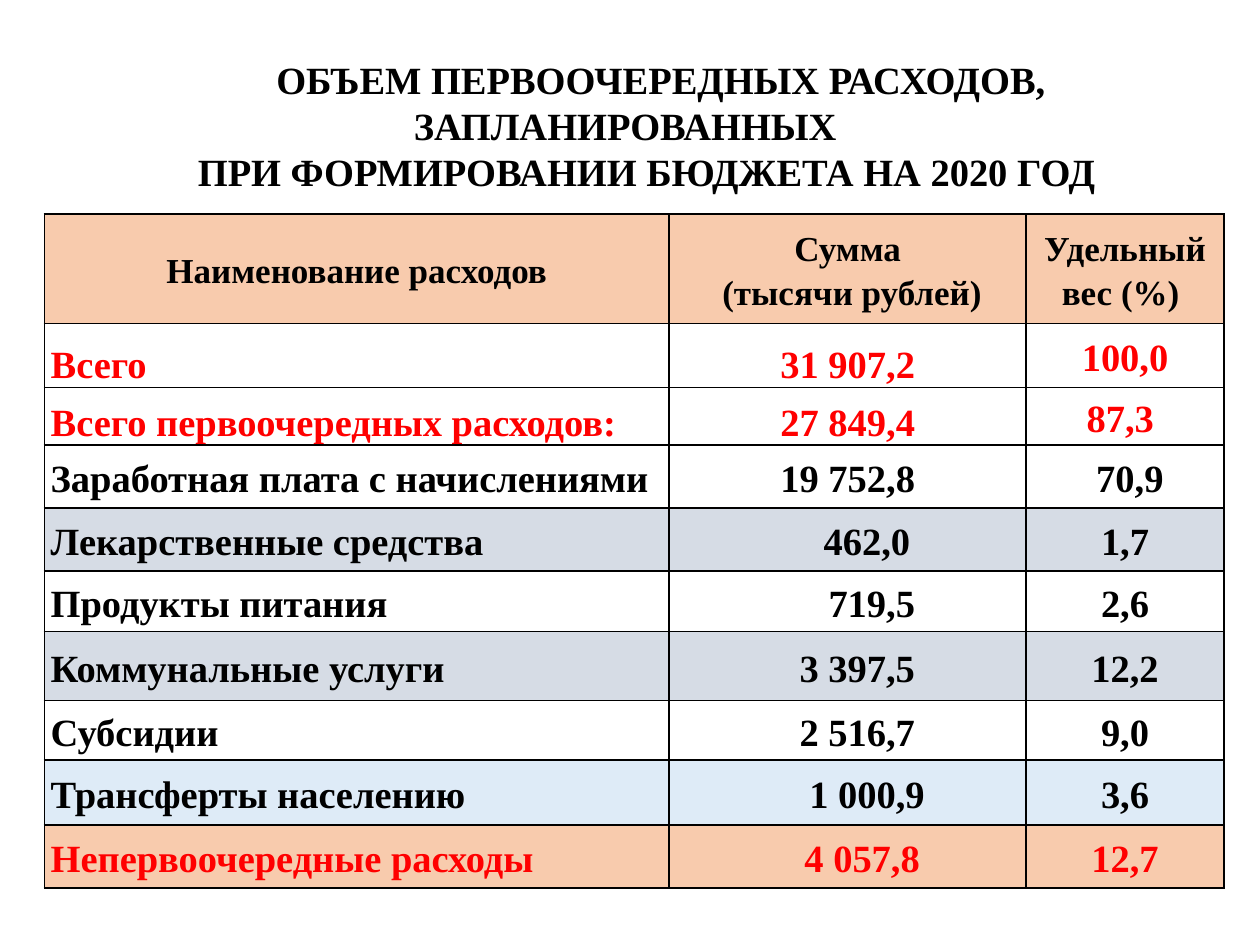
import pptx
import pptx.dml.color
import pptx.enum.text
import pptx.oxml
import pptx.oxml.ns
import pptx.util

Pt = pptx.util.Pt
RGBColor = pptx.dml.color.RGBColor
Align = pptx.enum.text.PP_ALIGN
Anchor = pptx.enum.text.MSO_ANCHOR

FONT = "Times New Roman"
BLACK = RGBColor(0x00, 0x00, 0x00)
RED = RGBColor(0xFF, 0x00, 0x00)
PEACH = RGBColor(0xF8, 0xCB, 0xAD)
GREY = RGBColor(0xD6, 0xDC, 0xE5)
PALE_BLUE = RGBColor(0xDE, 0xEB, 0xF7)

TITLE_LINES = [
    # text, first-line indent
    ("ОБЪЕМ ПЕРВООЧЕРЕДНЫХ РАСХОДОВ, ЗАПЛАНИРОВАННЫХ ", 35.3),
    ("ПРИ ФОРМИРОВАНИИ БЮДЖЕТА НА 2020 ГОД", 18.8),
]
HEADINGS = ["Наименование расходов", "Сумма\n (тысячи рублей)", "Удельный вес (%) "]
HEADING_HEIGHT = 62.5
COLUMN_WIDTHS = [357, 204, 113]
CELL_MARGIN = 3.6
EXPENSES = [
    # name, sum, share, text colour, fill, row height, extra left margin of the sum
    ("Всего", "31 907,2", "100,0", RED, None, 36.5, 0),
    ("Всего первоочередных расходов:", "27 849,4", "87,3 ", RED, None, 33, 0),
    ("Заработная плата с начислениями", "19 752,8", " 70,9", BLACK, None, 36, 0),
    ("Лекарственные средства", "462,0", "1,7", BLACK, GREY, 36, 22),
    ("Продукты питания", "719,5", "2,6", BLACK, None, 34.5, 27.5),
    ("Коммунальные услуги", "3 397,5", "12,2", BLACK, GREY, 39.5, 11),
    ("Субсидии", "2 516,7", "9,0", BLACK, None, 34, 11),
    ("Трансферты населению", "1 000,9", "3,6", BLACK, PALE_BLUE, 37, 22),
    ("Непервоочередные расходы", "4 057,8", "12,7", RED, PEACH, 36, 16.5),
]
TOTAL_ROWS = 2


def format_runs(paragraph, size, color):
    for run in paragraph.runs:
        run.font.name = FONT
        run.font.size = Pt(size)
        run.font.bold = True
        run.font.color.rgb = color


def add_title(slide):
    title = slide.shapes.title
    title.left, title.top, title.width, title.height = Pt(0), Pt(27.5), Pt(720), Pt(88)
    frame = title.text_frame
    frame.auto_size = pptx.enum.text.MSO_AUTO_SIZE.NONE
    frame.word_wrap = True
    frame.vertical_anchor = Anchor.MIDDLE
    frame.text = "\n".join(text for text, _ in TITLE_LINES)
    for paragraph, (_, indent) in zip(frame.paragraphs, TITLE_LINES):
        paragraph.alignment = Align.CENTER
        paragraph._p.get_or_add_pPr().set("indent", str(Pt(indent)))
        format_runs(paragraph, 22, BLACK)


def add_borders(cell):
    properties = cell._tc.get_or_add_tcPr()
    for position, side in enumerate(("lnL", "lnR", "lnT", "lnB")):
        border = pptx.oxml.parse_xml(
            f'<a:{side} {pptx.oxml.ns.nsdecls("a")} w="{Pt(1)}">'
            f'<a:solidFill><a:srgbClr val="{BLACK}"/></a:solidFill></a:{side}>'
        )
        properties.insert(position, border)


def fill_cell(cell, text, size, color, fill, alignment, anchor=Anchor.MIDDLE, shift=0):
    """Write and format one cell; shift widens the left margin to move centred text."""
    cell.margin_left = Pt(CELL_MARGIN + shift)
    cell.margin_right = Pt(CELL_MARGIN)
    cell.margin_top = cell.margin_bottom = 0
    cell.vertical_anchor = anchor
    cell.text_frame.text = text
    for paragraph in cell.text_frame.paragraphs:
        paragraph.alignment = alignment
        paragraph.line_spacing = 1.15
        format_runs(paragraph, size, color)
    if fill is None:
        cell.fill.background()
    else:
        cell.fill.solid()
        cell.fill.fore_color.rgb = fill
    add_borders(cell)


def add_expense_table(slide):
    heights = [HEADING_HEIGHT] + [expense[5] for expense in EXPENSES]
    table = slide.shapes.add_table(
        len(heights), len(COLUMN_WIDTHS),
        Pt(25.4), Pt(122.4), Pt(sum(COLUMN_WIDTHS)), Pt(sum(heights)),
    ).table
    table.first_row = table.horz_banding = False
    for column, width in zip(table.columns, COLUMN_WIDTHS):
        column.width = Pt(width)
    for row, height in zip(table.rows, heights):
        row.height = Pt(height)

    for column, heading in enumerate(HEADINGS):
        fill_cell(table.cell(0, column), heading, 20, BLACK, PEACH, Align.CENTER)
    for row, (name, amount, share, color, fill, _, shift) in enumerate(EXPENSES, 1):
        anchor = Anchor.BOTTOM if row <= TOTAL_ROWS else Anchor.MIDDLE
        fill_cell(table.cell(row, 0), name, 22, color, fill, Align.LEFT, anchor)
        fill_cell(table.cell(row, 1), amount, 22, color, fill, Align.CENTER, anchor, shift)
        fill_cell(table.cell(row, 2), share, 22, color, fill, Align.CENTER)


def main():
    presentation = pptx.Presentation()
    presentation.slide_width, presentation.slide_height = Pt(720), Pt(540)
    slide = presentation.slides.add_slide(presentation.slide_layouts.get_by_name("Title Only"))
    add_title(slide)
    add_expense_table(slide)
    presentation.save("out.pptx")


if __name__ == "__main__":
    main()
